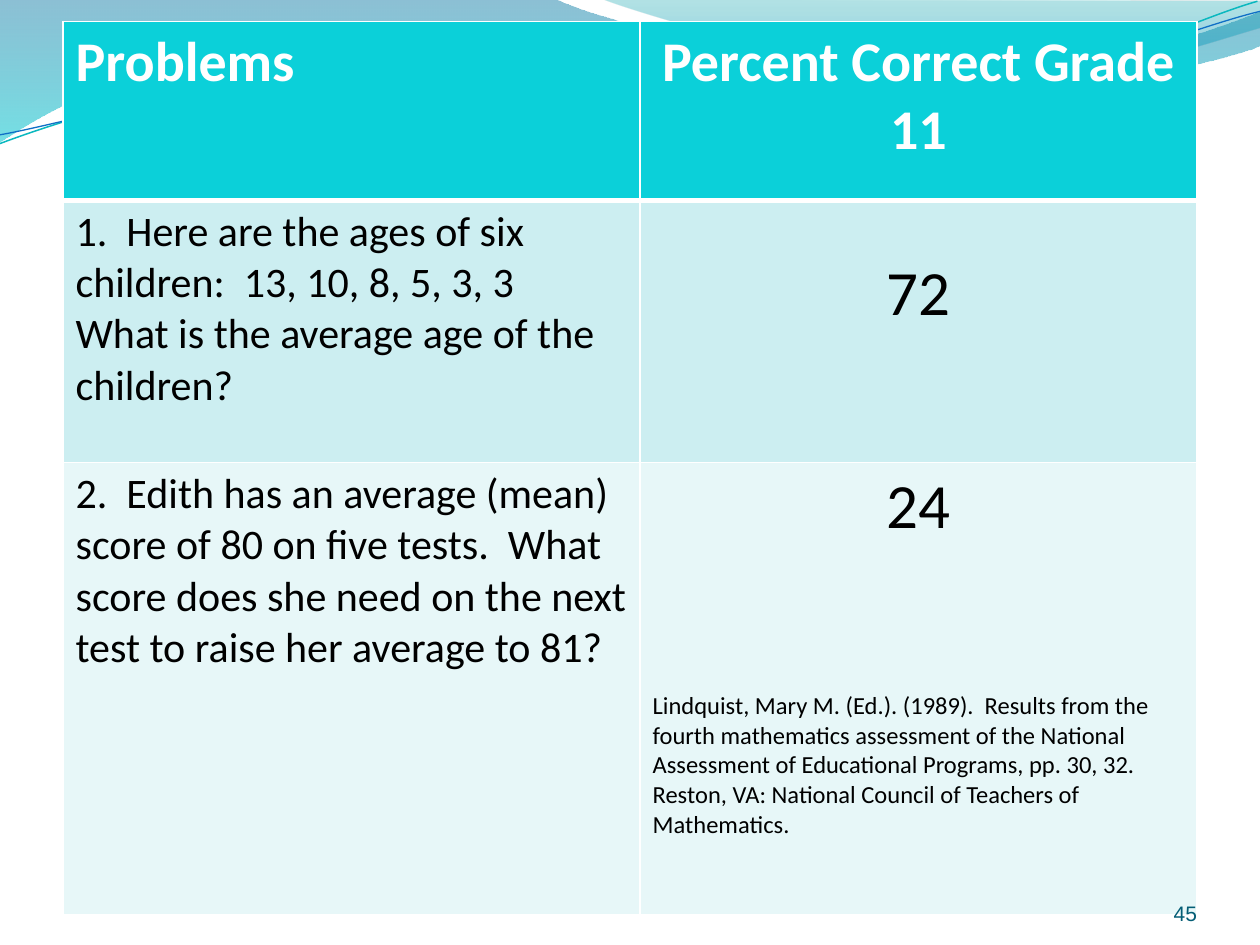
from dataclasses import dataclass
from math import cos, radians, sin
from typing import NamedTuple

from lxml.etree import SubElement as Sub
from pptx import Presentation
from pptx.dml.color import RGBColor as RGB
from pptx.enum.text import MSO_ANCHOR as Anchor, PP_ALIGN as Align
from pptx.oxml.ns import qn
from pptx.util import Inches, Pt


@dataclass(frozen=True)
class Theme:
    font: str = "Calibri"
    num_font: str = "Arial"
    white: str = "FFFFFF"
    black: str = "000000"
    head: str = "0BD0D9"
    band: str = "CCEEF1"
    pale: str = "E7F7F8"
    num: str = "045D75"
    head_pt: int = 32
    body_pt: int = 24
    score_pt: int = 36
    cite_pt: int = 14
    num_pt: int = 12


class Stop(NamedTuple):
    at: float
    color: str
    alpha: int


class Wave(NamedTuple):
    """Outline of points (2 numbers) and curves (6 numbers), as seen."""
    box: tuple
    start: tuple
    segs: list
    stops: tuple = ()
    line: str = ""
    width: float = 0
    turn: float = 0


class Para(NamedTuple):
    text: str
    size: int
    align: Align = Align.LEFT
    gap: float = 0


class Cell(NamedTuple):
    paras: list
    top: float = 0.05


class Row(NamedTuple):
    height: float
    fill: str
    cells: list
    color: str = "000000"
    bold: bool = False
    over: float = 1
    under: float = 1


T = Theme()
MID = Align.CENTER

WAVES = [
    Wave((-0.01, -0.01, 10.02, 1.14), (0, -0.01), [
        (4.4, -0.01), (4.76, 0.17, 6.64, 0.63, 7.58, 0.63),
        (8.53, 0.63, 9.58, 0.26, 10, 0.09), (10.01, 0.36),
        (9.83, 0.44, 8.7, 0.76, 7.46, 0.75),
        (6.22, 0.75, 3.82, 0.28, 2.57, 0.34),
        (1.29, 0.35, 0.46, 0.83, -0.01, 1.13), (0, -0.01),
    ], (Stop(0, "0074A1", 45), Stop(1, "00C6CF", 55))),
    Wave((4.79, 0, 5.21, 0.7), (4.79, 0), [
        (5.09, 0.12, 6.82, 0.63, 7.69, 0.66),
        (8.56, 0.7, 9.61, 0.33, 10, 0.22), (10, 0.01), (4.79, 0),
    ], (Stop(0, "00A1A9", 30), Stop(0.8, "008BBF", 45))),
    Wave((-0.02, 0.25, 10.02, 0.71), (0, 1.14), [
        (0.48, 0.96, 1.58, 0.6, 2.77, 0.55),
        (3.95, 0.49, 5.93, 0.91, 7.13, 0.82),
        (8.33, 0.74, 9.38, 0.18, 9.98, 0.01),
    ], line="0AB8BF", width=0.85, turn=-2.7),
    Wave((-0.02, 0.33, 10.03, 0.58), (0, 1.07), [
        (0.47, 0.99, 1.64, 0.64, 2.83, 0.59),
        (4.03, 0.54, 5.97, 0.86, 7.17, 0.78),
        (8.36, 0.7, 9.41, 0.23, 10, 0.09),
    ], line="0F6FC6", width=0.75, turn=-2.7),
]

COLS = [4.58, 4.42]
ROWS = [
    Row(1.42, T.head, [
        Cell([Para("Problems", T.head_pt)]),
        Cell([Para("Percent Correct Grade 11", T.head_pt, MID)]),
    ], T.white, True, under=3),
    Row(2.08, T.band, [
        Cell([Para("1.  Here are the ages of six children:  13, 10, 8, 5, 3, 3",
                   T.body_pt),
              Para("What is the average age of the children?", T.body_pt)]),
        Cell([Para("72", T.score_pt, MID)], top=0.44),
    ], over=3),
    Row(3.59, T.pale, [
        Cell([Para("2.  Edith has an average (mean) score of 80 on five tests.  "
                   "What score does she need on the next test to raise her "
                   "average to 81?", T.body_pt)]),
        Cell([Para("24", T.score_pt, MID),
              Para("Lindquist, Mary M. (Ed.). (1989).  Results from the fourth "
                   "mathematics assessment of the National Assessment of "
                   "Educational Programs, pp. 30, 32.  Reston, VA: National "
                   "Council of Teachers of Mathematics.", T.cite_pt, gap=83)]),
    ]),
]


def local(wave: Wave, x: float, y: float) -> tuple:
    """Undo the turn about the box centre and measure from its corner."""
    left, top, wide, high = wave.box
    dx, dy = x - left - wide / 2, y - top - high / 2
    ang = radians(-wave.turn)
    return (Inches(dx * cos(ang) - dy * sin(ang) + wide / 2),
            Inches(dx * sin(ang) + dy * cos(ang) + high / 2))


def add_step(track, tag: str, wave: Wave, nums: tuple) -> None:
    step = Sub(track, qn(tag))
    for x, y in zip(nums[::2], nums[1::2]):
        px, py = local(wave, x, y)
        Sub(step, qn("a:pt"), x=str(px), y=str(py))


def outline(slide, wave: Wave):
    """Build the freeform, then give it true curves."""
    pen = slide.shapes.build_freeform(0, 0)
    pen.add_line_segments([(Inches(1), Inches(1))], close=False)
    shape = pen.convert_to_shape()
    shape.left, shape.top, shape.width, shape.height = map(Inches, wave.box)
    shape.rotation = wave.turn % 360
    track = next(shape._element.iter(qn("a:path")))
    for step in list(track):
        track.remove(step)
    track.set("w", str(shape.width))
    track.set("h", str(shape.height))
    add_step(track, "a:moveTo", wave, wave.start)
    for seg in wave.segs:
        tag = "a:lnTo" if len(seg) == 2 else "a:cubicBezTo"
        add_step(track, tag, wave, seg)
    if wave.stops:
        Sub(track, qn("a:close"))
    return shape


def draw_wave(slide, wave: Wave) -> None:
    shape = outline(slide, wave)
    shape.shadow.inherit = False
    if not wave.stops:
        shape.fill.background()
        shape.line.color.rgb = RGB.from_string(wave.line)
        shape.line.width = Pt(wave.width)
        return
    shape.line.fill.background()
    shape.fill.gradient()
    shape.fill.gradient_angle = 270
    for mark, stop in zip(shape.fill.gradient_stops, wave.stops):
        mark.position = stop.at
        mark.color.rgb = RGB.from_string(stop.color)
    tints = shape._element.spPr.iter(qn("a:srgbClr"))
    for tint, stop in zip(tints, wave.stops):
        Sub(tint, qn("a:alpha"), val=str(stop.alpha * 1000))


def add_run(para, text: str, size: int, font: str, color: str,
            bold: bool = False) -> None:
    run = para.add_run()
    run.text = text
    run.font.size, run.font.name, run.font.bold = Pt(size), font, bold
    run.font.color.rgb = RGB.from_string(color)


def edge(cell, row: Row) -> None:
    """Put white rules on all four sides, ahead of the fill."""
    props = cell._tc.get_or_add_tcPr()
    sides = {"L": 1, "R": 1, "T": row.over, "B": row.under}
    for side, width in sides.items():
        line = Sub(props, qn(f"a:ln{side}"), w=str(Pt(width)))
        fill = Sub(line, qn("a:solidFill"))
        Sub(fill, qn("a:srgbClr"), val=T.white)


def fill_cell(cell, row: Row, data: Cell) -> None:
    edge(cell, row)
    cell.fill.solid()
    cell.fill.fore_color.rgb = RGB.from_string(row.fill)
    cell.margin_top = Inches(data.top)
    frame = cell.text_frame
    for i, item in enumerate(data.paras):
        para = frame.add_paragraph() if i else frame.paragraphs[0]
        para.alignment = item.align
        para.space_before = Pt(item.gap)
        add_run(para, item.text, item.size, T.font, row.color, row.bold)


def draw_table(slide) -> None:
    high = sum(row.height for row in ROWS)
    table = slide.shapes.add_table(
        len(ROWS), len(COLS), Inches(0.5), Inches(0.17),
        Inches(sum(COLS)), Inches(high)).table
    for col, width in zip(table.columns, COLS):
        col.width = Inches(width)
    for r, row in enumerate(ROWS):
        table.rows[r].height = Inches(row.height)
        for c, data in enumerate(row.cells):
            fill_cell(table.cell(r, c), row, data)


def draw_num(slide, text: str) -> None:
    box = slide.shapes.add_textbox(
        Inches(8.67), Inches(6.95), Inches(0.83), Inches(0.4))
    frame = box.text_frame
    frame.word_wrap = True
    frame.vertical_anchor = Anchor.BOTTOM
    frame.margin_left = frame.margin_right = 0
    frame.margin_top = frame.margin_bottom = 0
    para = frame.paragraphs[0]
    para.alignment = Align.RIGHT
    add_run(para, text, T.num_pt, T.num_font, T.num)


def main() -> None:
    deck = Presentation()
    deck.slide_width, deck.slide_height = Inches(10), Inches(7.5)
    slide = deck.slides.add_slide(deck.slide_layouts[6])
    for wave in WAVES:
        draw_wave(slide, wave)
    draw_table(slide)
    draw_num(slide, "45")
    deck.save("out.pptx")


if __name__ == "__main__":
    main()
